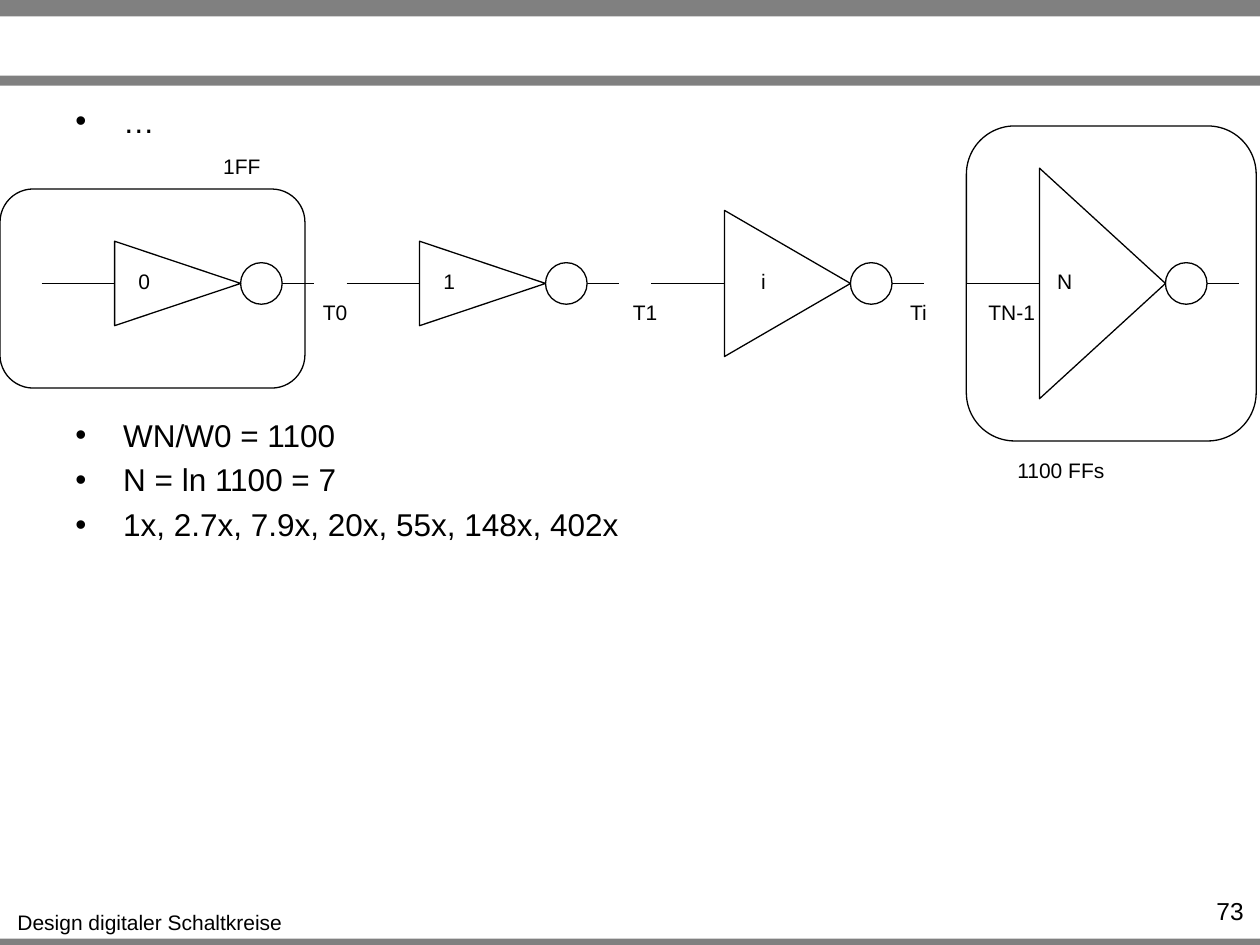
from dataclasses import dataclass

from lxml.etree import SubElement
from pptx import Presentation
from pptx.dml.color import RGBColor
from pptx.enum.shapes import MSO_CONNECTOR as Connector, MSO_SHAPE as Shape
from pptx.enum.text import PP_ALIGN as Align
from pptx.oxml.ns import qn
from pptx.util import Inches, Pt

BLACK, WHITE, GRAY = "000000", "FFFFFF", "808080"
AXIS = 2.25
LEAD = 0.58
BUBBLE = 0.33
LABEL_HEIGHT = 0.3


@dataclass
class Stage:
    left: float
    size: float


@dataclass
class Label:
    text: str
    left: float
    top: float
    width: float


@dataclass
class Frame:
    left: float
    top: float
    width: float
    height: float


STAGES = [Stage(0.33, 0.67), Stage(2.75, 0.67), Stage(5.17, 1.16), Stage(7.67, 1.83)]
LABELS = [
    Label("Design digitaler Schaltkreise", 0.03, 7.17, 2.32),
    Label("0", 1, 2.08, 0.29),
    Label("1", 3.42, 2.08, 0.29),
    Label("i", 5.94, 2.08, 0.24),
    Label("N", 8.29, 2.08, 0.32),
    Label("T0", 2.46, 2.33, 0.4),
    Label("T1", 4.92, 2.33, 0.4),
    Label("TN-1", 7.74, 2.33, 0.58),
    Label("Ti", 7.12, 2.33, 0.34),
    Label("1FF", 1.67, 1.17, 0.5),
    Label("1100 FFs", 7.97, 3.58, 0.9),
]
BARS = [Frame(0, 7.45, 10, 0.08), Frame(0, 0, 10, 0.13), Frame(0, 0.6, 10, 0.08)]
GROUPS = [Frame(0, 1.5, 2.42, 1.58), Frame(7.67, 1, 2.3, 2.5)]


def color(value: str) -> RGBColor:
    return RGBColor.from_string(value)


def add_figure(page, kind, frame: Frame, fill=None, line=None, rotation=0):
    lengths = [Inches(n) for n in (frame.left, frame.top, frame.width, frame.height)]
    figure = page.shapes.add_shape(kind, *lengths)
    figure.shadow.inherit = False
    figure.rotation = rotation
    if fill:
        figure.fill.solid()
        figure.fill.fore_color.rgb = color(fill)
    else:
        figure.fill.background()
    if line:
        figure.line.color.rgb = color(line)
        figure.line.width = Pt(0.75)
    else:
        figure.line.fill.background()


def add_wire(page, start: float, end: float):
    wire = page.shapes.add_connector(
        Connector.STRAIGHT, Inches(start), Inches(AXIS), Inches(end), Inches(AXIS)
    )
    wire.line.color.rgb = color(BLACK)
    wire.line.width = Pt(0.75)
    SubElement(wire._element.spPr, qn("a:effectLst"))


def add_text(page, frame: Frame, lines: list[str], size: float, align, wrap=True):
    lengths = [Inches(n) for n in (frame.left, frame.top, frame.width, frame.height)]
    box = page.shapes.add_textbox(*lengths)
    box.text_frame.word_wrap = wrap
    box.text_frame.text = "\n".join(lines)
    font_format = {"name": "Arial", "size": Pt(size)}
    for para in box.text_frame.paragraphs:
        para.alignment = align
        for span in para.runs:
            for key, value in font_format.items():
                setattr(span.font, key, value)
            span.font.color.rgb = color(BLACK)
    return box


def add_bullets(page, top: float, lines: list[str]):
    box = add_text(page, Frame(0.5, top, 9, 1.41), lines, 18, Align.LEFT)
    indents = {"marL": Inches(0.38), "indent": -Inches(0.38)}
    for para in box.text_frame.paragraphs:
        para.space_before = Pt(4)
        properties = para._p.get_or_add_pPr()
        for key, value in indents.items():
            properties.set(key, str(value))
        SubElement(properties, qn("a:buFont"), typeface="Arial")
        SubElement(properties, qn("a:buChar"), char="•")


def add_stage(page, stage: Stage):
    base = stage.left + LEAD
    tip = base + 1
    add_wire(page, stage.left, base)
    add_wire(page, tip, tip + LEAD)
    bubble = Frame(tip, AXIS - BUBBLE / 2, BUBBLE, BUBBLE)
    add_figure(page, Shape.OVAL, bubble, WHITE, BLACK)
    triangle = Frame(base + 0.5 - stage.size / 2, AXIS - 0.5, stage.size, 1)
    add_figure(page, Shape.ISOSCELES_TRIANGLE, triangle, line=BLACK, rotation=90)


def main():
    """Build the slide showing a chain of inverters that grow in size."""
    deck = Presentation()
    deck.slide_width, deck.slide_height = Inches(10), Inches(7.5)
    page = deck.slides.add_slide(deck.slide_layouts[6])
    for bar in BARS:
        add_figure(page, Shape.RECTANGLE, bar, fill=GRAY)
    add_bullets(page, 0.76, ["…"])
    add_text(page, Frame(9.1, 7.06, 0.87, 0.24), ["73"], 14, Align.RIGHT)
    for stage in STAGES:
        add_stage(page, stage)
    add_bullets(
        page,
        3.25,
        ["WN/W0 = 1100", "N = ln 1100 = 7", "1x, 2.7x, 7.9x, 20x, 55x, 148x, 402x"],
    )
    for group in GROUPS:
        add_figure(page, Shape.ROUNDED_RECTANGLE, group, line=BLACK)
    for label in LABELS:
        frame = Frame(label.left, label.top, label.width, LABEL_HEIGHT)
        add_text(page, frame, [label.text], 12, Align.CENTER, wrap=False)
    deck.save("out.pptx")


if __name__ == "__main__":
    main()
